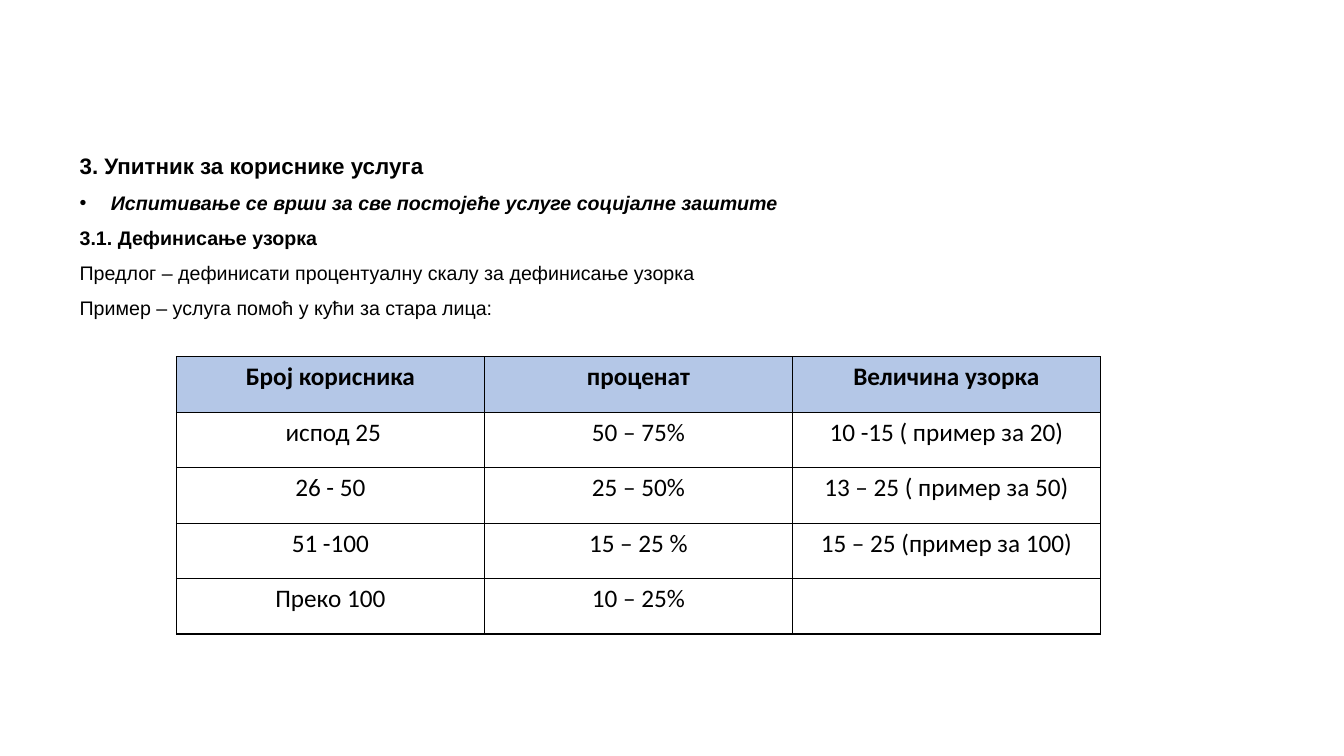
"""Builds the slide on the service user questionnaire and its sample sizes."""
from dataclasses import dataclass

from lxml import etree
from pptx import Presentation
from pptx import util as u
from pptx.dml.color import RGBColor
from pptx.enum import text
from pptx.oxml import ns

COLUMNS, ROWS = 160, 90
UNIT = u.Inches(1) // 12
BLACK, HEADER_BLUE = "000000", "B4C7E7"


@dataclass(frozen=True)
class Area:
    """A rectangle measured in grid columns and rows."""
    column: float
    row: float
    width: float
    height: float

    def lengths(self) -> list[u.Emu]:
        """Return left, top, width and height."""
        return [grid(n) for n in (self.column, self.row, self.width, self.height)]


@dataclass(frozen=True)
class Line:
    """One paragraph of the body."""
    wording: str
    size: int = 14
    bold: bool = False
    italic: bool = False
    bullet: bool = False


BODY_AREA = Area(8.28, 17.88, 143.76, 55.08)
TABLE_AREA = Area(21, 42.48, 110, 33)
LINES = [
    Line("3. Упитник за кориснике услуга", size=16, bold=True),
    Line("Испитивање се врши за све постојеће услуге социјалне заштите",
         bold=True, italic=True, bullet=True),
    Line("3.1. Дефинисање узорка", bold=True),
    Line("Предлог – дефинисати процентуалну скалу за дефинисање узорка"),
    Line("Пример – услуга помоћ у кући за стара лица:"),
]
SAMPLES = [
    ("Број корисника", "проценат", "Величина узорка"),
    (" испод 25", "50 – 75%", "10 -15 ( пример за 20)"),
    ("26 - 50", "25 – 50%", "13 – 25 ( пример за 50)"),
    ("51 -100", "15 – 25 %", "15 – 25 (пример за 100)"),
    ("Преко 100", "10 – 25%", ""),
]


def grid(count: float) -> u.Emu:
    """Convert grid units to a length."""
    return u.Emu(round(count * UNIT))


def colour(value: str) -> RGBColor:
    """Convert a hex string to a colour."""
    return RGBColor.from_string(value)


def set_font(paragraph, name: str, size: int, bold: bool, italic: bool = False) -> None:
    """Set the font of a whole paragraph."""
    font = paragraph.font
    font.name, font.size, font.bold, font.italic = name, u.Pt(size), bold, italic
    font.color.rgb = colour(BLACK)


def set_bullet(paragraph, bullet: bool) -> None:
    """Give a paragraph a hanging bullet, or remove bullet and indent."""
    properties = paragraph._p.get_or_add_pPr()
    indent = u.Inches(0.31) if bullet else 0
    properties.set("marL", str(indent))
    properties.set("indent", str(-indent))
    if bullet:
        etree.SubElement(properties, ns.qn("a:buFont"), typeface="Arial")
        etree.SubElement(properties, ns.qn("a:buChar"), char="•")
    else:
        etree.SubElement(properties, ns.qn("a:buNone"))


def add_body(slide) -> None:
    """Fill the body placeholder with the lines."""
    body = slide.placeholders[1]
    body.left, body.top, body.width, body.height = BODY_AREA.lengths()
    frame = body.text_frame
    frame.word_wrap = True
    frame.auto_size = text.MSO_AUTO_SIZE.NONE
    frame.vertical_anchor = text.MSO_ANCHOR.TOP
    for index, line in enumerate(LINES):
        paragraph = frame.add_paragraph() if index else frame.paragraphs[0]
        paragraph.text = line.wording
        set_bullet(paragraph, line.bullet)
        paragraph.line_spacing = 0.9
        paragraph.space_before = u.Pt(10 if index else 0)
        set_font(paragraph, "Arial", line.size, line.bold, line.italic)


def set_borders(cell) -> None:
    """Draw a thin black line on each side of a cell."""
    properties = cell._tc.get_or_add_tcPr()
    for side in ("lnL", "lnR", "lnT", "lnB"):
        border = etree.SubElement(properties, ns.qn(f"a:{side}"), w=str(u.Pt(1)))
        fill = etree.SubElement(border, ns.qn("a:solidFill"))
        etree.SubElement(fill, ns.qn("a:srgbClr"), val=BLACK)


def add_samples(slide) -> None:
    """Add the table of sample sizes."""
    frame = slide.shapes.add_table(len(SAMPLES), len(SAMPLES[0]), *TABLE_AREA.lengths())
    table = frame.table
    table.first_row = table.horz_banding = False
    for row_index, row in enumerate(SAMPLES):
        header = row_index == 0
        for column_index, wording in enumerate(row):
            cell = table.cell(row_index, column_index)
            set_borders(cell)
            if header:
                cell.fill.solid()
                cell.fill.fore_color.rgb = colour(HEADER_BLUE)
            else:
                cell.fill.background()
            paragraph = cell.text_frame.paragraphs[0]
            if wording:
                paragraph.text = wording
            paragraph.alignment = text.PP_ALIGN.CENTER
            set_font(paragraph, "Calibri", 18, header)


def main() -> None:
    """Build and save the presentation."""
    presentation = Presentation()
    presentation.slide_width, presentation.slide_height = grid(COLUMNS), grid(ROWS)
    slide = presentation.slides.add_slide(presentation.slide_layouts[1])
    title = slide.shapes.title._element
    title.getparent().remove(title)
    add_body(slide)
    add_samples(slide)
    presentation.save("out.pptx")


if __name__ == "__main__":
    main()
